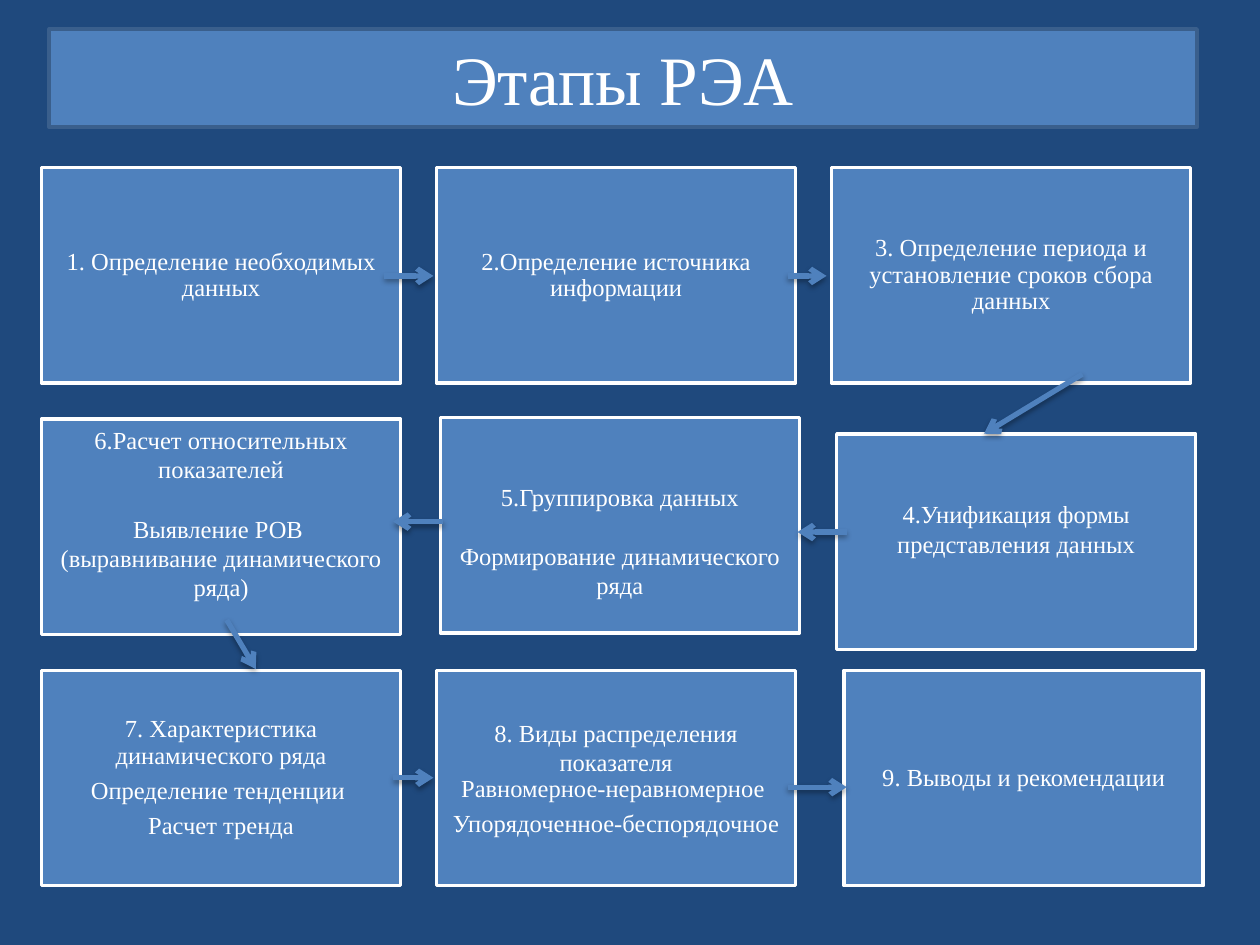
"""Build the slide with the nine stages of the analysis, joined by arrows."""
from dataclasses import dataclass

from lxml import etree
from pptx import Presentation, util as u
from pptx.dml.color import RGBColor
from pptx.enum import shapes, text
from pptx.oxml import ns


@dataclass(frozen=True)
class Theme:
    back: str = "1F497D"
    panel: str = "4F81BD"
    title_edge: str = "3A5F8C"
    light: str = "FFFFFF"
    shadow: str = "000000"
    font: str = "Times New Roman"
    title_size: float = 39.6
    body_size: float = 14
    edge: float = 2
    arrow: float = 3


THEME = Theme()
WIDTH, HEIGHT = 10, 7.5
LEFT, TOP, COLUMN, ROW = 0.33, 1.33, 3.135, 1.995
BOX_WIDTH, BOX_HEIGHT, INSET = 2.85, 1.71, 0.06
TIGHT, OPEN, GAP = (0.9, 4.9), (1, 0), (1, 17)

TITLE = "Этапы РЭА"
TITLE_AREA = (0.39, 0.23, 9.11, 0.78)

STAGES = [
    dict(cell=(0, 0), lines=[("1. Определение необходимых данных", TIGHT)]),
    dict(cell=(1, 0), lines=[("2.Определение источника информации", TIGHT)]),
    dict(cell=(2, 0), lines=[("3. Определение периода и установление сроков сбора данных", TIGHT)]),
    dict(cell=(2, 1), shift=(0.04, 0.12), below=0.21,
         lines=[("4.Унификация формы представления данных", OPEN)]),
    dict(cell=(1, 1), shift=(0.03, -0.01), above=0.24,
         lines=[("5.Группировка данных", GAP), ("Формирование динамического ряда", OPEN)]),
    dict(cell=(0, 1), below=0.21,
         lines=[("6.Расчет относительных показателей", GAP), ("Выявление РОВ ", OPEN),
                ("(выравнивание динамического ряда)", OPEN)]),
    dict(cell=(0, 2),
         lines=[("7. Характеристика динамического ряда", TIGHT),
                ("Определение тенденции ", TIGHT), ("Расчет тренда", TIGHT)]),
    dict(cell=(1, 2),
         lines=[("8. Виды распределения показателя", OPEN),
                ("Равномерное-неравномерное ", TIGHT), ("Упорядоченное-беспорядочное", TIGHT)]),
    dict(cell=(2, 2), shift=(0.1, 0), lines=[("9. Выводы и рекомендации", TIGHT)]),
]

ARROWS = [
    ((0.305, 0.292), (0.344, 0.292)),
    ((0.625, 0.292), (0.656, 0.292)),
    ((0.859, 0.396), (0.781, 0.459)),
    ((0.672, 0.563), (0.633, 0.563)),
    ((0.352, 0.552), (0.312, 0.552)),
    ((0.18, 0.656), (0.203, 0.708)),
    ((0.312, 0.823), (0.344, 0.823)),
    ((0.625, 0.833), (0.672, 0.833)),
]


def color(code):
    return RGBColor.from_string(code)


def write(frame, lines, size=THEME.body_size, above=0, below=0, inset=INSET):
    frame.word_wrap = True
    frame.vertical_anchor = text.MSO_ANCHOR.MIDDLE
    frame.margin_left = frame.margin_right = u.Inches(inset)
    frame.margin_top = u.Inches(inset + above)
    frame.margin_bottom = u.Inches(inset + below)
    for index, (words, (spacing, after)) in enumerate(lines):
        line = frame.add_paragraph() if index else frame.paragraphs[0]
        line.alignment = text.PP_ALIGN.CENTER
        line.line_spacing = spacing
        line.space_after = u.Pt(after)
        run = line.add_run()
        run.text = words
        run.font.name = THEME.font
        run.font.size = u.Pt(size)
        run.font.color.rgb = color(THEME.light)


def add_panel(slide, area, edge, lines, **text_format):
    panel = slide.shapes.add_shape(shapes.MSO_SHAPE.RECTANGLE, *map(u.Inches, area))
    panel.shadow.inherit = False
    panel.fill.solid()
    panel.fill.fore_color.rgb = color(THEME.panel)
    panel.line.color.rgb = color(edge)
    panel.line.width = u.Pt(THEME.edge)
    write(panel.text_frame, lines, **text_format)


def add_stage(slide, cell, lines, shift=(0, 0), **text_format):
    left = LEFT + cell[0] * COLUMN + shift[0]
    top = TOP + cell[1] * ROW + shift[1]
    area = (left, top, BOX_WIDTH, BOX_HEIGHT)
    add_panel(slide, area, THEME.light, lines, **text_format)


def add_arrow(slide, start, end):
    ends = [u.Inches(share * side) for point in (start, end)
            for share, side in zip(point, (WIDTH, HEIGHT))]
    arrow = slide.shapes.add_connector(shapes.MSO_CONNECTOR.STRAIGHT, *ends)
    arrow.line.color.rgb = color(THEME.panel)
    arrow.line.width = u.Pt(THEME.arrow)
    etree.SubElement(arrow.line._get_or_add_ln(), ns.qn("a:tailEnd"), type="arrow")
    effects = etree.SubElement(arrow._element.spPr, ns.qn("a:effectLst"))
    shadow = etree.SubElement(effects, ns.qn("a:outerShdw"), blurRad=str(u.Pt(3.1)),
                              dist=str(u.Pt(1.8)), dir="5400000", rotWithShape="0")
    tint = etree.SubElement(shadow, ns.qn("a:srgbClr"), val=THEME.shadow)
    etree.SubElement(tint, ns.qn("a:alpha"), val="35000")


def main():
    deck = Presentation()
    deck.slide_width, deck.slide_height = u.Inches(WIDTH), u.Inches(HEIGHT)
    slide = deck.slides.add_slide(deck.slide_layouts[6])
    slide.background.fill.solid()
    slide.background.fill.fore_color.rgb = color(THEME.back)
    add_panel(slide, TITLE_AREA, THEME.title_edge, [(TITLE, OPEN)], size=THEME.title_size)
    for stage in STAGES:
        add_stage(slide, **stage)
    for start, end in ARROWS:
        add_arrow(slide, start, end)
    deck.save("out.pptx")


if __name__ == "__main__":
    main()
